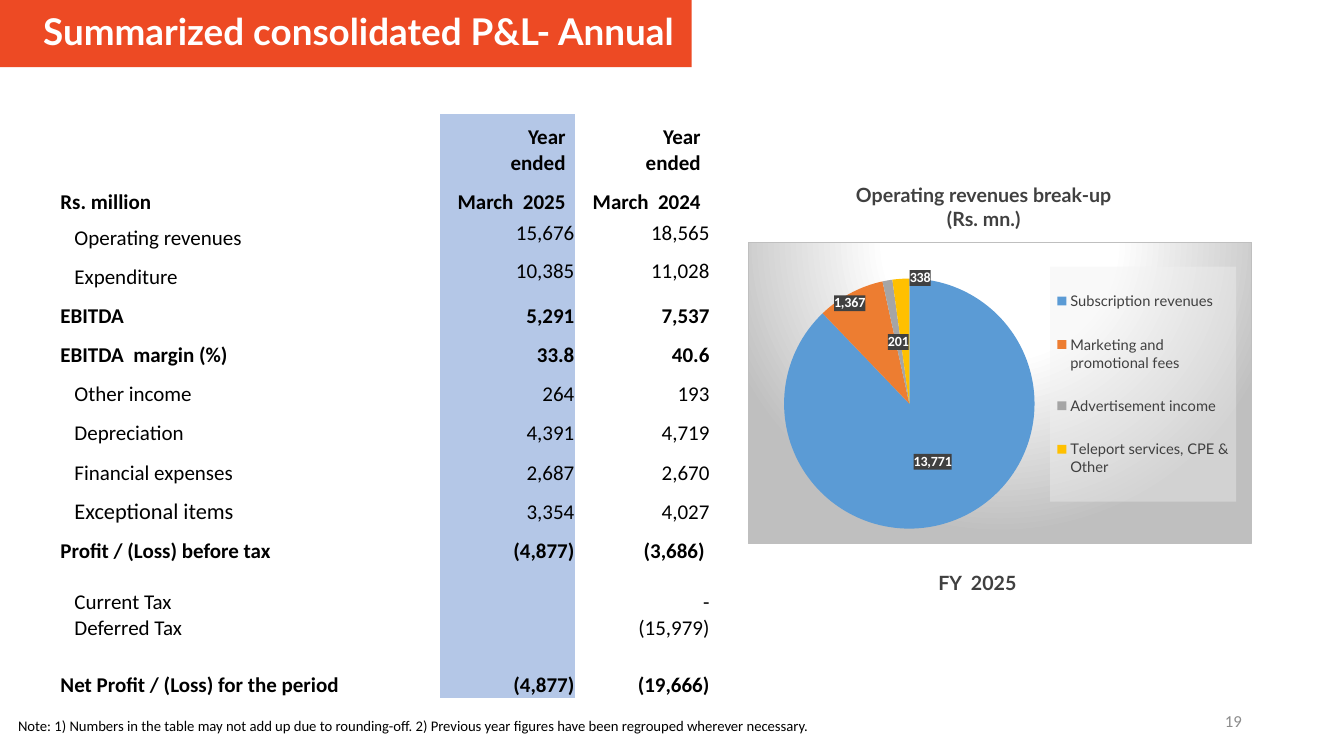
from copy import deepcopy
from dataclasses import dataclass
from lxml.etree import SubElement, fromstring
from pptx import Presentation
from pptx.chart.data import CategoryChartData
from pptx.dml.color import RGBColor
from pptx.enum.chart import XL_CHART_TYPE, XL_LABEL_POSITION, XL_LEGEND_POSITION
from pptx.enum.text import MSO_ANCHOR, MSO_AUTO_SIZE, PP_ALIGN
from pptx.oxml.ns import nsdecls, qn
from pptx.util import Pt


@dataclass(frozen=True)
class Theme:
    """Colours, fonts and type sizes of the slide."""
    banner: str = "ED4A24"
    white: str = "FFFFFF"
    black: str = "000000"
    dark: str = "404040"
    grey: str = "8C8C8C"
    border: str = "BFBFBF"
    highlight: str = "B4C7E7"
    slices: tuple = ("5B9BD5", "ED7D31", "A5A5A5", "FFC000")
    heading_font: str = "Lato"
    body_font: str = "Calibri"
    title_size: float = 26.3
    table_size: float = 15
    large_row_size: float = 16
    caption_size: float = 14
    page_number_size: float = 12
    small_size: float = 10.5
    label_size: float = 10


THEME = Theme()
NO_TABLE_STYLE = "{2D5ABB26-0587-4C30-8999-92F81FD0307C}"
COLUMN_WIDTHS = (264, 8, 96.5, 96.5)
ROW_INDENT = 10
HEADER_MARGIN = 7
ROWS = (
    ("", "Year\nended", "Year\nended", 44.6, "header"),
    ("Rs. million", "March  2025", "March  2024", 28, "header"),
    ("Operating revenues", "15,676", "18,565", 25.2, "middle"),
    ("Expenditure", "10,385", "11,028", 28, "middle"),
    ("EBITDA", "5,291", "7,537", 28, "total"),
    ("EBITDA  margin (%)", "33.8", "40.6", 28, "total"),
    ("Other income", "264", "193", 28, "item"),
    ("Depreciation", "4,391", "4,719", 28, "item"),
    ("Financial expenses", "2,687", "2,670", 28, "item"),
    ("Exceptional items", "3,354", "4,027", 28, "large"),
    ("Profit / (Loss) before tax", "(4,877)", "(3,686) ", 28, "total"),
    ("Current Tax\nDeferred Tax", "", "-\n(15,979)", 72.7, "both"),
    ("Net Profit / (Loss) for the period", "(4,877)", "(19,666)", 23, "total"),
)
REVENUES = (
    ("Subscription revenues", 13771),
    ("Marketing and promotional fees", 1367),
    ("Advertisement income", 201),
    ("Teleport services, CPE & Other", 338),
)
MOVED_LABELS = {1: (-0.06, -0.15), 3: (0.03, -0.21)}


def style_font(font, size, color, name, bold=False):
    """Set size, colour, family and weight of a font."""
    font.size, font.name, font.bold = Pt(size), name, bold
    font.color.rgb = RGBColor.from_string(color)


def write_lines(frame, text, align, size, color, name, bold=False, indent=0):
    """Write each line of text as a paragraph with one run."""
    for number, line in enumerate(text.split("\n")):
        para = frame.add_paragraph() if number else frame.paragraphs[0]
        para.alignment = align
        if indent:
            para._p.get_or_add_pPr().set("marL", str(Pt(indent)))
            para._p.get_or_add_pPr().set("indent", "0")
        span = para.add_run()
        span.text = line
        style_font(span.font, size, color, name, bold)


def add_banner(page, box, text):
    """Place the title placeholder as a coloured banner."""
    banner = page.shapes.title
    banner.left, banner.top, banner.width, banner.height = map(Pt, box)
    banner.fill.solid()
    banner.fill.fore_color.rgb = RGBColor.from_string(THEME.banner)
    frame = banner.text_frame
    frame.word_wrap, frame.auto_size = True, MSO_AUTO_SIZE.NONE
    frame.vertical_anchor = MSO_ANCHOR.MIDDLE
    write_lines(frame, text, PP_ALIGN.CENTER, THEME.title_size, THEME.white,
                THEME.heading_font, True, 18)
    frame.paragraphs[0].line_spacing = 0.9


def add_text(page, box, text, align, size, color, name, bold=False, anchor=MSO_ANCHOR.TOP):
    """Place a wrapped text box."""
    frame = page.shapes.add_textbox(*map(Pt, box)).text_frame
    frame.word_wrap, frame.vertical_anchor = True, anchor
    write_lines(frame, text, align, size, color, name, bold)


def add_statement(page, box):
    """Place the profit and loss table with the current year highlighted."""
    holder = page.shapes.add_table(len(ROWS), len(COLUMN_WIDTHS), *map(Pt, box))
    next(holder.element.iter(qn("a:tableStyleId"))).text = NO_TABLE_STYLE
    table = holder.table
    table.first_row = table.horz_banding = False
    for column, width in zip(table.columns, COLUMN_WIDTHS):
        column.width = Pt(width)
    for row, (label, current, previous, height, kind) in zip(table.rows, ROWS):
        row.height = Pt(height)
        bold = kind in ("header", "total")
        for index, (cell, text) in enumerate(zip(row.cells, (label, "", current, previous))):
            is_label, is_value = index == 0, index > 1
            cell.margin_left = cell.margin_right = cell.margin_top = Pt(0.7)
            cell.margin_bottom = 0
            if kind == "header" and is_value:
                cell.margin_right = Pt(HEADER_MARGIN)
            centred = kind == "both" or (kind == "middle" and is_value)
            cell.vertical_anchor = MSO_ANCHOR.MIDDLE if centred else MSO_ANCHOR.BOTTOM
            if index == 2:
                cell.fill.solid()
                cell.fill.fore_color.rgb = RGBColor.from_string(THEME.highlight)
            else:
                cell.fill.background()
            if text:
                size = THEME.large_row_size if kind == "large" and is_label else THEME.table_size
                write_lines(cell.text_frame, text, PP_ALIGN.LEFT if is_label else PP_ALIGN.RIGHT,
                            size, THEME.black, THEME.body_font, bold,
                            ROW_INDENT if is_label and not bold else 0)


def solid_properties(color, alpha):
    """Return chart shape properties with a translucent fill."""
    return fromstring(f'<c:spPr {nsdecls("c", "a")}><a:solidFill><a:srgbClr val="{color}">'
                      f'<a:alpha val="{alpha * 1000}"/></a:srgbClr></a:solidFill></c:spPr>')


def manual_layout(**values):
    """Return a manual chart layout element."""
    parts = "".join(f'<c:{key} val="{value}"/>' for key, value in values.items())
    return fromstring(f'<c:layout {nsdecls("c")}><c:manualLayout>{parts}'
                      '</c:manualLayout></c:layout>')


def replace_layout(parent, position, layout):
    """Put a layout into a chart element in place of any present one."""
    for old in parent.findall(qn("c:layout")):
        parent.remove(old)
    parent.insert(position, layout)


def style_labels(plot):
    """Format the value labels and shift those of the narrow slices."""
    labels = plot.series[0].data_labels
    labels.show_value, labels.show_percentage = True, False
    labels.number_format, labels.number_format_is_linked = "#,##0", False
    labels.position = XL_LABEL_POSITION.CENTER
    style_font(labels.font, THEME.label_size, THEME.white, THEME.body_font, True)
    element = labels._element
    element.find(qn("c:numFmt")).addnext(solid_properties(THEME.dark, 90))
    shared = [part for part in element if part.tag != qn("c:showLeaderLines")]
    for place, (index, (x, y)) in enumerate(MOVED_LABELS.items()):
        label = fromstring(f'<c:dLbl {nsdecls("c")}/>')
        SubElement(label, qn("c:idx")).set("val", str(index))
        label.append(manual_layout(x=x, y=y))
        label.extend(deepcopy(part) for part in shared)
        element.insert(place, label)


def add_revenue_pie(page, box):
    """Place the revenue pie chart on its gradient panel."""
    data = CategoryChartData()
    data.categories = [name for name, _ in REVENUES]
    data.add_series("Series 1", [value for _, value in REVENUES])
    chart = page.shapes.add_chart(XL_CHART_TYPE.PIE, *map(Pt, box), data).chart
    chart.has_title, chart.has_legend = False, True
    style_font(chart.font, THEME.label_size, THEME.black, THEME.body_font)
    plot = chart.plots[0]
    plot.vary_by_categories = True
    for index, color in enumerate(THEME.slices):
        fill = plot.series[0].points[index].format.fill
        fill.solid()
        fill.fore_color.rgb = RGBColor.from_string(color)
    style_labels(plot)
    legend = chart.legend
    legend.position, legend.include_in_layout = XL_LEGEND_POSITION.RIGHT, False
    style_font(legend.font, THEME.small_size, THEME.dark, THEME.heading_font)
    legend._element.find(qn("c:txPr")).addprevious(solid_properties("F2F2F2", 39))
    replace_layout(legend._element, 1, manual_layout(
        xMode="edge", yMode="edge", x=0.6, y=0.08, w=0.37, h=0.78))
    area = next(chart._chartSpace.iter(qn("c:plotArea")))
    replace_layout(area, 0, manual_layout(
        layoutTarget="inner", xMode="edge", yMode="edge", x=0.07, y=0.12, w=0.5, h=0.83))
    stops = "".join(f'<a:gs pos="{place * 1000}"><a:srgbClr val="{color}"/></a:gs>' for place, color
                    in ((0, THEME.white), (39, THEME.white), (100, THEME.border)))
    panel = fromstring(
        f'<c:spPr {nsdecls("c", "a")}><a:gradFill><a:gsLst>{stops}</a:gsLst><a:path path="circle">'
        '<a:fillToRect l="50000" t="-80000" r="50000" b="180000"/></a:path></a:gradFill>'
        f'<a:ln w="{Pt(0.75)}"><a:solidFill><a:srgbClr val="{THEME.border}"/></a:solidFill></a:ln></c:spPr>')
    chart._chartSpace.find(qn("c:chart")).addnext(panel)


def main():
    """Build and save the deck."""
    deck = Presentation()
    deck.slide_width, deck.slide_height = Pt(960), Pt(540)
    page = deck.slides.add_slide(deck.slide_layouts[5])
    caption = (PP_ALIGN.CENTER, THEME.caption_size, THEME.dark, THEME.heading_font, True)
    add_banner(page, (0, 0, 494, 48), "Summarized consolidated P&L- Annual")
    add_statement(page, (42.5, 81.4, 465, 417.5))
    add_text(page, (600.5, 130.3, 204.5, 34.6), "Operating revenues break-up (Rs. mn.)",
             *caption, MSO_ANCHOR.MIDDLE)
    add_text(page, (646, 404, 104.4, 24.5), "FY  2025", *caption)
    add_text(page, (5.8, 508.3, 882, 20), "Note: 1) Numbers in the table may not add up due to "
             "rounding-off. 2) Previous year figures have been regrouped wherever necessary.",
             PP_ALIGN.LEFT, THEME.small_size, THEME.black, THEME.body_font)
    add_text(page, (678.2, 500.4, 216, 28.8), "19", PP_ALIGN.RIGHT, THEME.page_number_size,
             THEME.grey, THEME.body_font, anchor=MSO_ANCHOR.MIDDLE)
    add_revenue_pie(page, (534.2, 172.8, 360, 216))
    deck.save("out.pptx")


if __name__ == "__main__":
    main()
